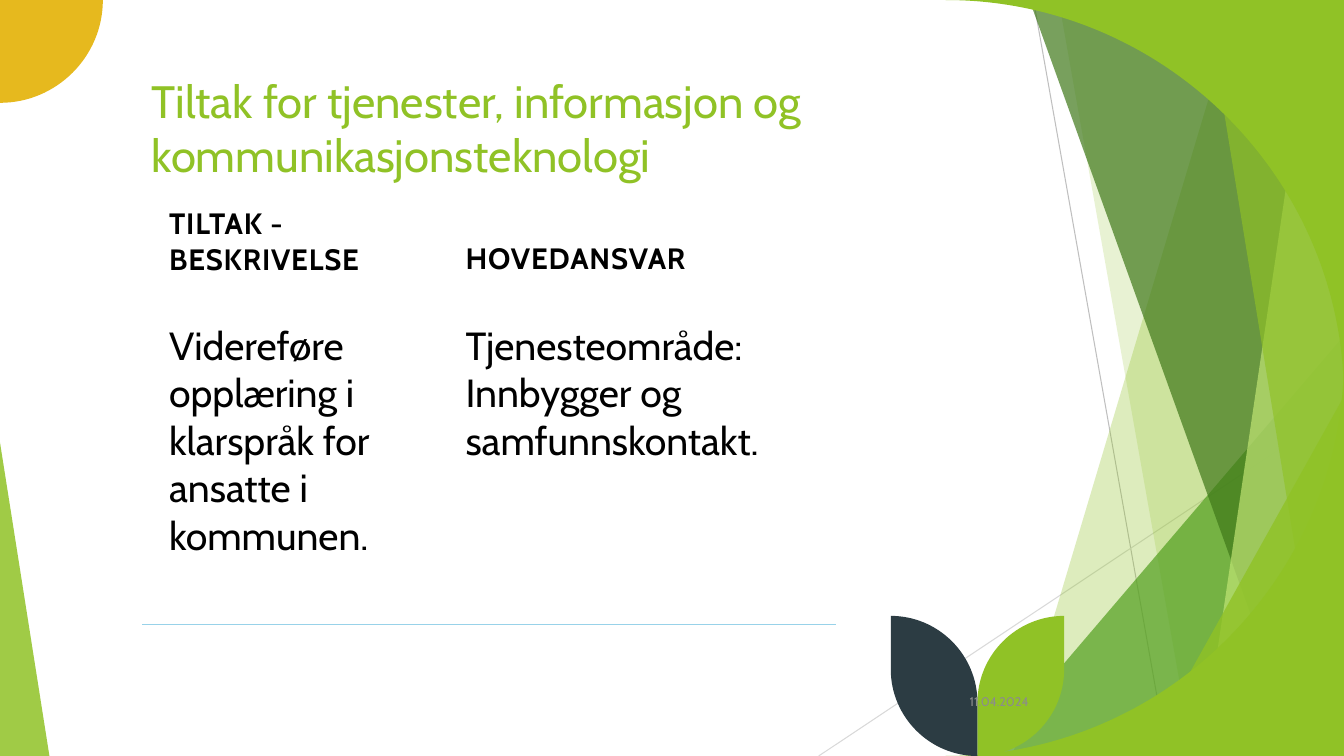
from dataclasses import dataclass

from lxml import etree
from pptx import Presentation
from pptx import util as u
from pptx.dml.color import RGBColor
from pptx.enum import shapes, text
from pptx.oxml.ns import qn

WIDTH, HEIGHT = u.Inches(13.33), u.Inches(7.5)
COLUMNS, ROWS = 133.3, 75
COLUMN, ROW = WIDTH / COLUMNS, HEIGHT / ROWS
ROUNDNESS = 0.55
PLAIN_TABLE = "{2D5ABB26-0587-4C30-8999-92F81FD0307C}"

FONT = "Cabin"
LIME = RGBColor(0x90, 0xC2, 0x26)
GREEN = RGBColor(0x54, 0xA0, 0x21)
FOREST = RGBColor(0x3F, 0x78, 0x19)
PALE = RGBColor(0xC0, 0xE4, 0x74)
GOLD = RGBColor(0xE6, 0xB9, 0x1E)
SLATE = RGBColor(0x2C, 0x3C, 0x43)
SKY = RGBColor(0x98, 0xD2, 0xE9)
SILVER = RGBColor(0xBF, 0xBF, 0xBF)
MIST = RGBColor(0xD9, 0xD9, 0xD9)
GREY = RGBColor(0x8C, 0x8C, 0x8C)
BLACK = RGBColor(0, 0, 0)
WHITE = RGBColor(255, 255, 255)


@dataclass
class Box:
    """A region measured in grid columns and rows."""
    left: float
    top: float
    width: float
    height: float

    @property
    def right(self):
        """Return the right edge."""
        return self.left + self.width

    @property
    def bottom(self):
        """Return the bottom edge."""
        return self.top + self.height

    def frame(self):
        """Return left, top, width and height as lengths."""
        return (u.Emu(round(self.left * COLUMN)), u.Emu(round(self.top * ROW)),
                u.Emu(round(self.width * COLUMN)), u.Emu(round(self.height * ROW)))


def paint(shape, colour, opacity=100):
    """Fill a shape without outline or shadow."""
    shape.shadow.inherit = False
    shape.fill.solid()
    shape.fill.fore_color.rgb = colour
    shape.line.fill.background()
    if opacity < 100:
        tint = shape._element.spPr.find(".//" + qn("a:srgbClr"))
        etree.SubElement(tint, qn("a:alpha"), val=str(opacity * 1000))


def outline(page, points, colour, opacity=100, bends=()):
    """Draw a closed outline; edges to points in bends leave level and arrive upright."""
    spots = [(round(x * COLUMN), round(y * ROW)) for x, y in points]
    builder = page.shapes.build_freeform(*spots[0])
    builder.add_line_segments(spots[1:], close=True)
    shape = builder.convert_to_shape()
    edges = list(shape._element.iter(qn("a:lnTo")))
    nodes = [(int(node.get("x")), int(node.get("y")))
             for node in shape._element.iter(qn("a:pt"))]
    for bend in bends:
        (x1, y1), (x2, y2) = nodes[bend - 1], nodes[bend]
        handles = ((x1 + ROUNDNESS * (x2 - x1), y1), (x2, y2 + ROUNDNESS * (y1 - y2)))
        edge = edges[bend - 1]
        edge.tag = qn("a:cubicBezTo")
        for place, (x, y) in enumerate(handles):
            edge.insert(place, etree.Element(qn("a:pt"), x=str(round(x)), y=str(round(y))))
    paint(shape, colour, opacity)


def triangle(page, box, apex, colour, opacity):
    """Draw a triangle whose apex is a share of its width."""
    shape = page.shapes.add_shape(shapes.MSO_SHAPE.ISOSCELES_TRIANGLE, *box.frame())
    shape.adjustments[0] = apex
    paint(shape, colour, opacity)


def hairline(page, start, end, colour):
    """Draw a thin straight line between grid points."""
    ends = [u.Emu(round(value)) for x, y in (start, end) for value in (x * COLUMN, y * ROW)]
    line = page.shapes.add_connector(shapes.MSO_CONNECTOR.STRAIGHT, *ends)
    line.line.color.rgb = colour
    line.line.width = u.Pt(0.75)
    etree.SubElement(line._element.spPr, qn("a:effectLst"))


def write(para, words, size, colour, bold=False):
    """Add one formatted run to a paragraph."""
    span = para.add_run()
    span.text = words
    span.font.name = FONT
    span.font.size = u.Pt(size)
    span.font.bold = bold
    span.font.color.rgb = colour
    return span


def add_ribbons(page, box):
    """Place the overlapping bands along the right of the box."""
    hairline(page, (box.left + 102.5, box.top), (box.left + 115.8, box.bottom), SILVER)
    hairline(page, (box.right, box.top + 40.3), (box.left + 81.2, box.bottom), MIST)

    def band(upper, lower, colour, opacity):
        outline(page, [(box.left + upper, box.top), (box.right, box.top),
                       (box.right, box.bottom), (box.left + lower, box.bottom)], colour, opacity)

    def wedge(width, height, colour, opacity):
        triangle(page, Box(box.right - width, box.bottom - height, width, height),
                 1, colour, opacity)

    band(122.8, 100.4, LIME, 30)
    band(105, 118.3, LIME, 20)
    wedge(35.6, 41.7, GREEN, 72)
    band(102.1, 129.1, FOREST, 70)
    band(130.3, 119.2, PALE, 70)
    band(119.6, 131.8, LIME, 65)
    wedge(19.9, 35.7, LIME, 80)
    triangle(page, Box(box.left, box.bottom - 31.1, 4.9, 31.1), 0, LIME, 85)


def add_corners(page, box):
    """Round off the right corners and set a quarter disc at top left."""
    radius, disc = 39.5, 10.2
    for y, inward in ((box.top, 1), (box.bottom, -1)):
        outline(page, [(box.right, y), (box.right - radius, y),
                       (box.right, y + inward * radius)], LIME, bends=(2,))
    outline(page, [(box.left, box.top), (box.left, box.top + disc),
                   (box.left + disc, box.top)], GOLD, bends=(2,))


def add_leaves(page, box):
    """Place two mirrored leaves that meet at the middle of the box."""
    radius = box.width / 2
    middle = box.left + radius
    for side, colour in ((radius, LIME), (-radius, SLATE)):
        outline(page, [(middle, box.bottom), (middle + side, box.bottom - radius),
                       (middle + side, box.top), (middle, box.top + radius)],
                colour, bends=(1, 3))


def add_title(page, box):
    """Place the slide title in the box."""
    title = page.shapes.title
    title.left, title.top, title.width, title.height = box.frame()
    frame = title.text_frame
    frame.word_wrap = True
    frame.vertical_anchor = text.MSO_ANCHOR.MIDDLE
    para = frame.paragraphs[0]
    para.alignment = text.PP_ALIGN.LEFT
    write(para, "Tiltak for tjenester, informasjon og kommunikasjonsteknologi", 32.4, LIME)


def add_grid(page, box, widths, heights):
    """Add an unstyled table with the given columns and rows."""
    table = page.shapes.add_table(len(heights), len(widths), *box.frame()).table
    table.first_row = table.horz_banding = False
    table._tbl.tblPr.find(qn("a:tableStyleId")).text = PLAIN_TABLE
    for column, width in zip(table.columns, widths):
        column.width = u.Emu(round(width * COLUMN))
    for row, height in zip(table.rows, heights):
        row.height = u.Emu(round(height * ROW))
    return table


def add_underlay(page, box):
    """Place the blank white table with its blue bottom rule."""
    table = add_grid(page, box, (33.4, box.width - 33.4), (box.height,))
    for cell in table.iter_cells():
        cell.fill.solid()
        cell.fill.fore_color.rgb = WHITE
        rule = etree.Element(qn("a:lnB"), w=str(u.Pt(0.75)))
        fill = etree.SubElement(rule, qn("a:solidFill"))
        etree.SubElement(fill, qn("a:srgbClr"), val=str(SKY))
        etree.SubElement(rule, qn("a:prstDash"), val="solid")
        cell._tc.get_or_add_tcPr().insert(0, rule)


def add_measures(page, box):
    """Place the table of measures and who is responsible."""
    rows = (("TILTAK - BESKRIVELSE", "HOVEDANSVAR"),
            ("Videreføre opplæring i klarspråk for ansatte i kommunen.",
             "Tjenesteområde: Innbygger og samfunnskontakt."))
    table = add_grid(page, box, (29.4, 41.5), (9, 27.6))
    for r, row in enumerate(rows):
        head = r == 0
        for c, words in enumerate(row):
            cell = table.cell(r, c)
            cell.fill.background()
            cell.margin_left = cell.margin_right = u.Inches(0.27)
            cell.margin_top = u.Inches(0.18 if head else 0.27)
            cell.margin_bottom = u.Inches(0.18)
            cell.vertical_anchor = text.MSO_ANCHOR.BOTTOM if head else text.MSO_ANCHOR.TOP
            span = write(cell.text_frame.paragraphs[0], words, 21 if head else 28, BLACK, head)
            if head:
                span._r.get_or_add_rPr().set("spc", "60")


def add_date(page, box):
    """Place the date at the right of the box."""
    frame = page.shapes.add_textbox(*box.frame()).text_frame
    frame.word_wrap = True
    frame.vertical_anchor = text.MSO_ANCHOR.MIDDLE
    para = frame.paragraphs[0]
    para.alignment = text.PP_ALIGN.RIGHT
    para.space_after = u.Pt(6)
    write(para, "11.04.2024", 9, GREY)


def main():
    """Build the slide and save it."""
    deck = Presentation()
    deck.slide_width, deck.slide_height = WIDTH, HEIGHT
    page = deck.slides.add_slide(deck.slide_layouts.get_by_name("Title Only"))
    whole = Box(0, 0, COLUMNS, ROWS)
    add_ribbons(page, whole)
    add_corners(page, whole)
    add_leaves(page, Box(88.35, 61.1, 17.2, 13.9))
    add_title(page, Box(14.05, 6.65, 111.5, 12))
    add_underlay(page, Box(14.1, 18.95, 68.85, 43))
    add_date(page, Box(93, 67.6, 10, 4))
    add_measures(page, Box(14.08, 18.68, 70.9, 43))
    deck.save("out.pptx")


if __name__ == "__main__":
    main()
